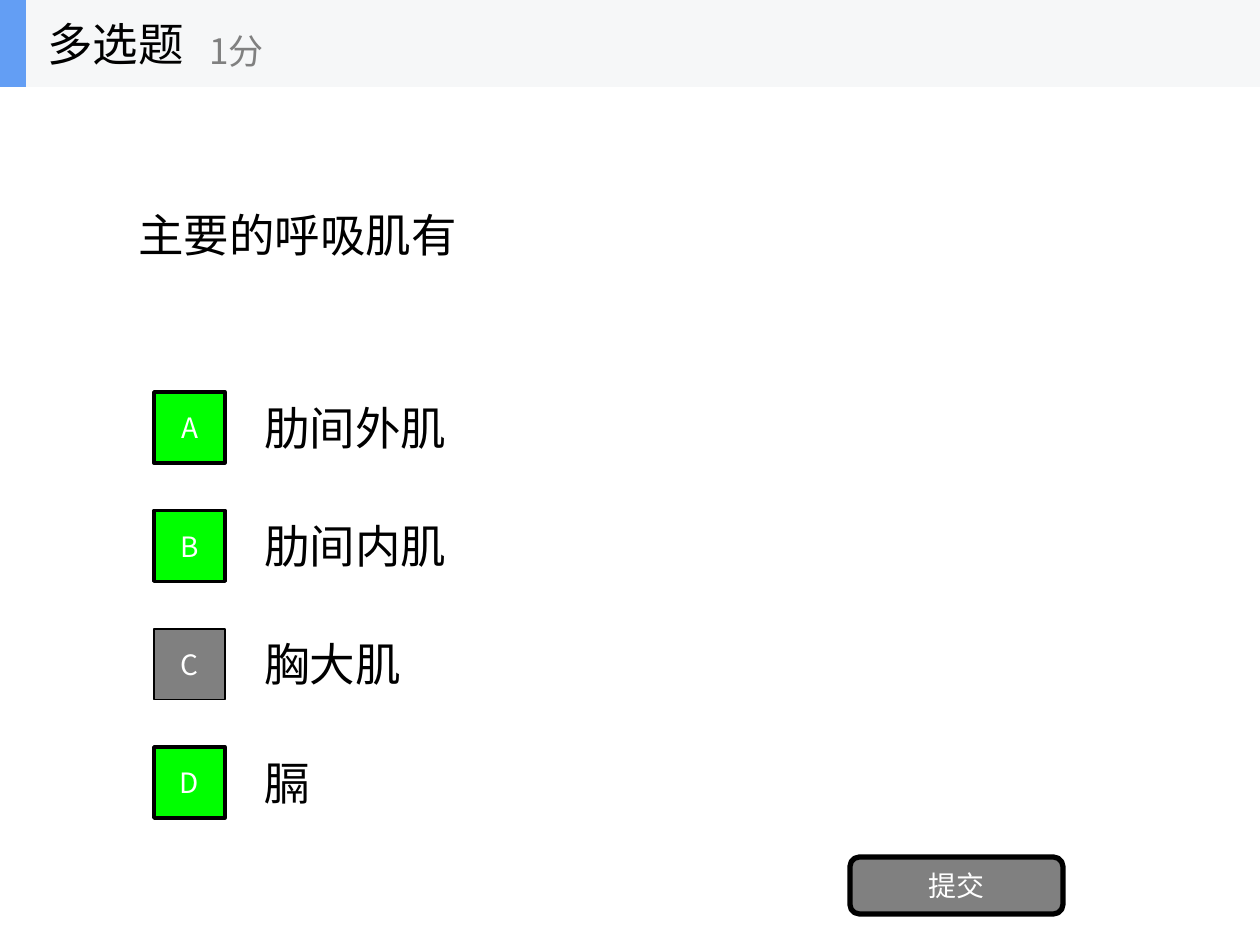
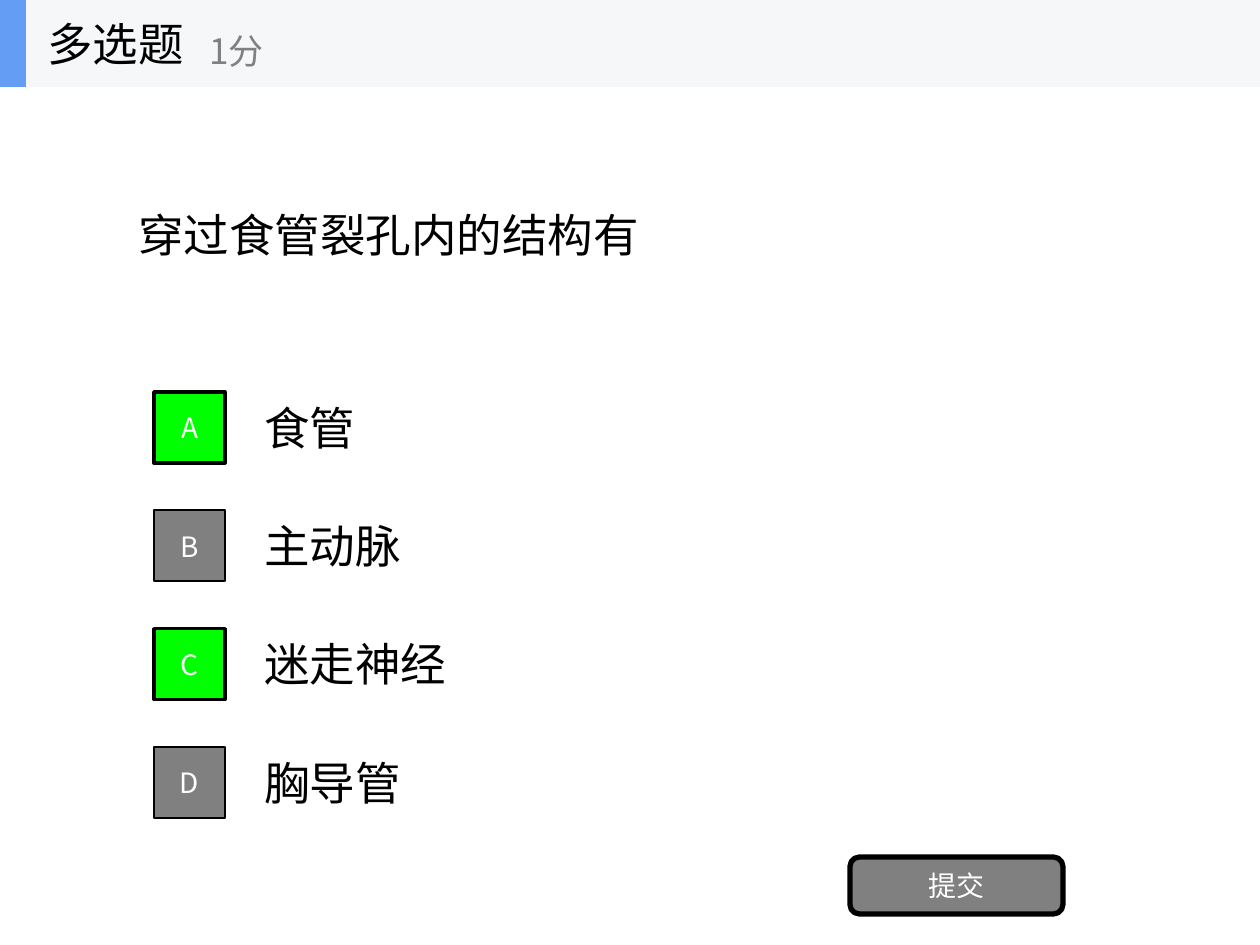
from collections import namedtuple

from lxml.etree import SubElement
from pptx import Presentation
from pptx.dml.color import RGBColor
from pptx.enum.shapes import MSO_SHAPE
from pptx.enum.text import MSO_ANCHOR, PP_ALIGN
from pptx.oxml.ns import qn
from pptx.util import Pt

EMU_PER_PX = 914400 / 126
FONT = "Noto Sans CJK SC"
COLORS = {
    "text": "000000",
    "outline": "000000",
    "muted": "808080",
    "correct": "00FF00",
    "light": "FFFFFF",
    "band": "F6F7F8",
    "accent": "639EF4",
}

Box = namedtuple("Box", "left top width height")
SLIDE = Box(0, 0, 1260, 945)
HEADER = Box(0, 0, 1260, 87)
QUESTION = Box(126, 87, 1008, 295)
OPTIONS = Box(154, 383, 980, 443)
SUBMIT = Box(850, 857, 213, 57)

QUESTIONS = [
    ("主要的呼吸肌有", ["肋间外肌", "肋间内肌", "胸大肌", "膈"], "ABD"),
    ("穿过食管裂孔内的结构有", ["食管", "主动脉", "迷走神经", "胸导管"], "AC"),
]


def px(length):
    return round(length * EMU_PER_PX)


def color(name):
    return RGBColor.from_string(COLORS[name])


def write(shape, text, size, color_name, align=PP_ALIGN.LEFT):
    frame = shape.text_frame
    frame.word_wrap = True
    frame.vertical_anchor = MSO_ANCHOR.MIDDLE
    paragraph = frame.paragraphs[0]
    paragraph.alignment = align
    run = paragraph.add_run()
    run.text = text
    run.font.size = Pt(size)
    run.font.color.rgb = color(color_name)
    run.font.name = FONT
    east_asian = SubElement(run.font._element, qn("a:ea"))
    east_asian.set("typeface", FONT)


def add_text(shapes, box, text, size=26, color_name="text"):
    write(shapes.add_textbox(*map(px, box)), text, size, color_name)


def add_block(shapes, kind, box, fill, line_width=0):
    shape = shapes.add_shape(kind, *map(px, box))
    shape.shadow.inherit = False
    shape.fill.solid()
    shape.fill.fore_color.rgb = color(fill)
    if line_width:
        shape.line.color.rgb = color("outline")
        shape.line.width = Pt(line_width)
    else:
        shape.line.fill.background()
    return shape


def add_header(slide, box):
    shapes = slide.shapes.add_group_shape().shapes
    left, top, _, height = box
    add_block(shapes, MSO_SHAPE.RECTANGLE, box, "band")
    add_block(shapes, MSO_SHAPE.RECTANGLE, box._replace(width=26), "accent")
    add_text(shapes, Box(left + 35, top, 262, height), "多选题")
    add_text(shapes, Box(left + 197, top + 15, 315, height - 16), "1分", 20, "muted")


def add_options(slide, box, options, correct):
    """Spread the options evenly down the box, each with a lettered badge."""
    row_height, badge_size, text_indent = 88, 71, 98
    pitch = (box.height - row_height) / (len(options) - 1)
    for index, (letter, option) in enumerate(zip("ABCD", options)):
        top = box.top + index * pitch
        add_text(slide.shapes, Box(box.left + text_indent, top,
                                   box.width - text_indent, row_height), option)
        fill, line_width = ("correct", 2) if letter in correct else ("muted", 1)
        badge = add_block(slide.shapes, MSO_SHAPE.RECTANGLE,
                          Box(box.left, top + 9, badge_size, badge_size), fill, line_width)
        write(badge, letter, 16, "light", PP_ALIGN.CENTER)


def add_submit_button(slide, box):
    button = add_block(slide.shapes, MSO_SHAPE.ROUNDED_RECTANGLE, box, "muted", 3)
    write(button, "提交", 16, "light", PP_ALIGN.CENTER)


def add_question_slide(presentation, question, options, correct):
    slide = presentation.slides.add_slide(presentation.slide_layouts[6])
    add_text(slide.shapes, QUESTION, question)
    add_options(slide, OPTIONS, options, correct)
    add_submit_button(slide, SUBMIT)
    add_header(slide, HEADER)


def main():
    presentation = Presentation()
    presentation.slide_width = px(SLIDE.width)
    presentation.slide_height = px(SLIDE.height)
    for question, options, correct in QUESTIONS:
        add_question_slide(presentation, question, options, correct)
    presentation.save("out.pptx")


if __name__ == "__main__":
    main()
